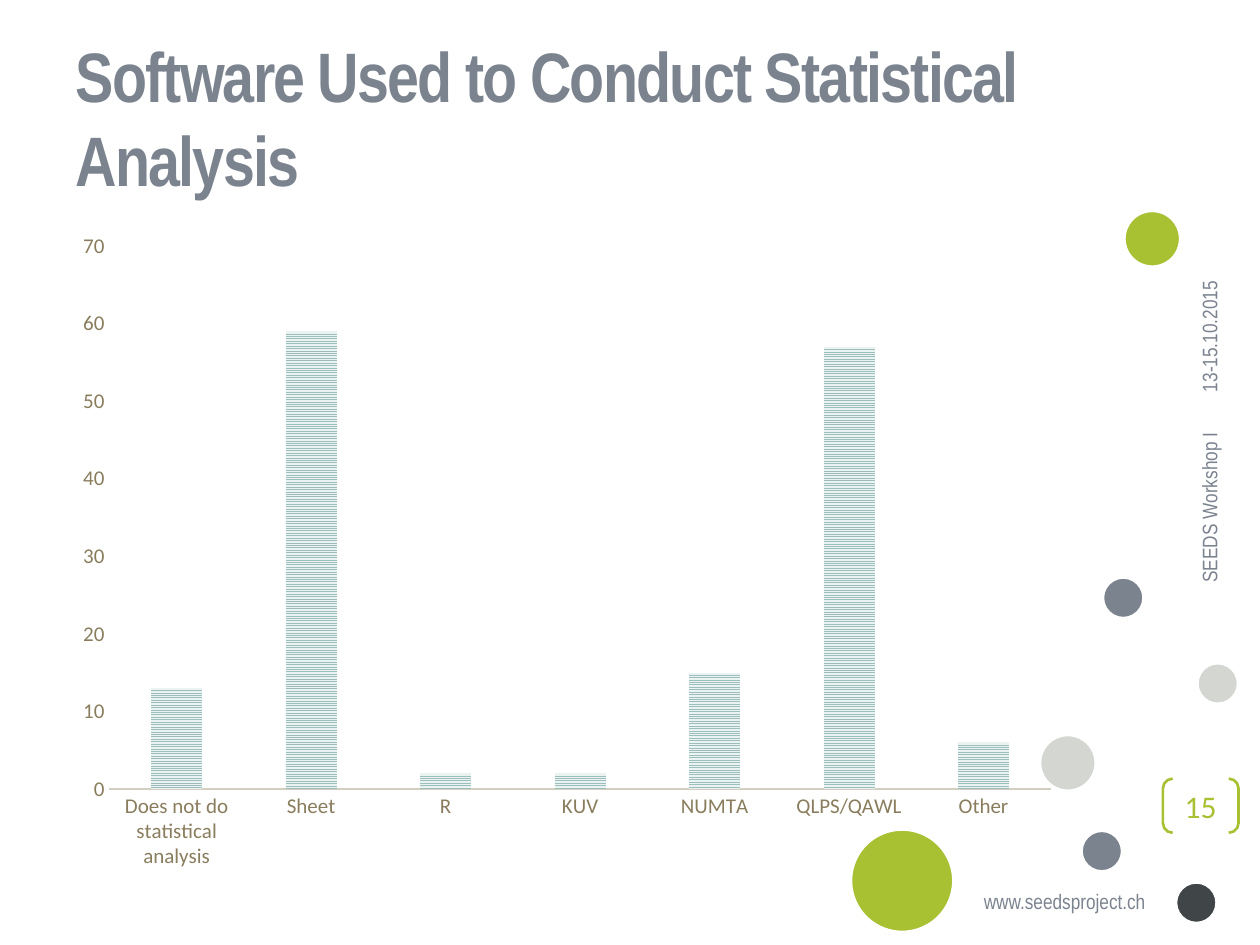
from dataclasses import dataclass

from pptx import Presentation
from pptx.chart.data import CategoryChartData
from pptx.dml.color import RGBColor
from pptx.enum.chart import XL_CHART_TYPE as Chart, XL_TICK_MARK as Tick
from pptx.enum.dml import MSO_PATTERN as Pattern
from pptx.enum.shapes import MSO_SHAPE as Shape
from pptx.enum.text import MSO_ANCHOR as Anchor, MSO_AUTO_SIZE as AutoSize, PP_ALIGN as Align
from pptx.util import Emu, Pt

TITLE_ONLY = 5


@dataclass(frozen=True)
class Theme:
    white: str = "FFFFFF"
    green: str = "A7C133"
    dark: str = "404548"
    light: str = "D4D6D2"
    slate: str = "7B838F"
    chart_text: str = "2F2B20"
    axis_text: str = "897D5D"
    axis_line: str = "D3CEBF"
    bar: str = "9CBEBD"
    bar_back: str = "EBF2F2"
    heading: str = "Arial Narrow"
    body: str = "Calibri"
    title_size: int = 40
    number_size: int = 18
    text_size: int = 12
    chart_size: int = 10


def px(n):
    """100 px to the inch."""
    return Emu(n * 9144)


def rgb(code):
    return RGBColor.from_string(code)


def set_font(font, name, size, color, bold=False):
    font.name, font.size, font.bold = name, Pt(size), bold
    font.color.rgb = rgb(color)


def write(tf, text, *, font, size, color, bold=False, align=Align.LEFT,
          anchor=Anchor.MIDDLE, spacing=None):
    tf.vertical_anchor = anchor
    p = tf.paragraphs[0]
    p.alignment = align
    r = p.add_run()
    r.text = text
    set_font(r.font, font, size, color, bold)
    if spacing is not None:
        r.font._element.set("spc", str(spacing))


class Deck:
    def __init__(self, theme):
        self.t = theme
        self.prs = Presentation()
        self.prs.slide_width, self.prs.slide_height = px(1000), px(750)
        self.s = self.prs.slides.add_slide(self.prs.slide_layouts[TITLE_ONLY])

    def title(self, text, x, y, w, h):
        sp = self.s.shapes.title
        sp.left, sp.top, sp.width, sp.height = map(px, (x, y, w, h))
        sp.text_frame.auto_size = AutoSize.NONE
        write(sp.text_frame, text, font=self.t.heading, size=self.t.title_size,
              color=self.t.slate, bold=True, spacing=-100)

    def dot(self, x, y, d, color):
        sp = self.s.shapes.add_shape(Shape.OVAL, px(x), px(y), px(d), px(d))
        sp.shadow.inherit = False
        sp.fill.solid()
        sp.fill.fore_color.rgb = rgb(color)
        sp.line.color.rgb = rgb(self.t.white)
        sp.line.width = Pt(2)

    def label(self, text, x, y, w, h, *, rotation=0, wrap=True, **fmt):
        sp = self.s.shapes.add_textbox(px(x), px(y), px(w), px(h))
        sp.rotation = rotation
        sp.text_frame.word_wrap = wrap
        write(sp.text_frame, text, font=self.t.heading, size=self.t.text_size,
              color=self.t.slate, **fmt)

    def page_number(self, text, x, y, w, h):
        sp = self.s.shapes.add_shape(Shape.DOUBLE_BRACKET, px(x), px(y), px(w), px(h))
        sp.adjustments[0] = 0.18
        sp.shadow.inherit = False
        sp.fill.background()
        sp.line.color.rgb = rgb(self.t.green)
        sp.line.width = Pt(1.5)
        tf = sp.text_frame
        tf.margin_left = tf.margin_right = tf.margin_top = tf.margin_bottom = 0
        write(tf, text, font=self.t.body, size=self.t.number_size,
              color=self.t.green, align=Align.CENTER)

    def columns(self, values, x, y, w, h):
        t = self.t
        data = CategoryChartData()
        data.categories = list(values)
        data.add_series("Series 1", list(values.values()))
        chart = self.s.shapes.add_chart(
            Chart.COLUMN_CLUSTERED, px(x), px(y), px(w), px(h), data).chart
        chart.has_legend = chart.has_title = False
        set_font(chart.font, t.body, t.chart_size, t.chart_text)

        plot = chart.plots[0]
        plot.vary_by_categories = False
        plot.gap_width, plot.overlap = 164, -22
        fill = plot.series[0].format.fill
        fill.patterned()
        fill.pattern = Pattern.NARROW_HORIZONTAL
        fill.fore_color.rgb, fill.back_color.rgb = rgb(t.bar), rgb(t.bar_back)

        cat, val = chart.category_axis, chart.value_axis
        for axis in (cat, val):
            axis.has_major_gridlines = False
            axis.major_tick_mark = axis.minor_tick_mark = Tick.NONE
            set_font(axis.tick_labels.font, t.body, t.text_size, t.axis_text)
        cat.format.line.color.rgb = rgb(t.axis_line)
        cat.format.line.width = Pt(1.5)
        val.format.line.fill.background()
        val.minimum_scale, val.maximum_scale, val.major_unit = 0, 70, 10


def main():
    t = Theme()
    deck = Deck(t)

    # Decorative dots
    for x, y, d, color in (
        (675, 658, 82, t.green), (892, 167, 45, t.green),
        (933, 700, 33, t.dark),
        (825, 583, 45, t.light), (950, 526, 33, t.light),
        (858, 659, 33, t.slate), (875, 458, 33, t.slate),
    ):
        deck.dot(x, y, d, color)

    # Web address, page number, event and date
    deck.label("www.seedsproject.ch", 771, 700, 154, 30, wrap=False, anchor=Anchor.TOP)
    deck.page_number("15", 923, 618, 60, 43)
    deck.label("SEEDS Workshop I", 872, 403, 175, 36, rotation=270, align=Align.RIGHT)
    deck.label("13-15.10.2015", 895, 240, 129, 33, rotation=270)

    # Title and chart
    deck.title("Software Used to Conduct Statistical Analysis", 50, 30, 800, 125)
    deck.columns({
        "Does not do statistical analysis": 13, "Sheet": 59, "R": 2, "KUV": 2,
        "NUMTA": 15, "QLPS/QAWL": 57, "Other": 6,
    }, 50, 175, 800, 525)

    deck.prs.save("out.pptx")


if __name__ == "__main__":
    main()
